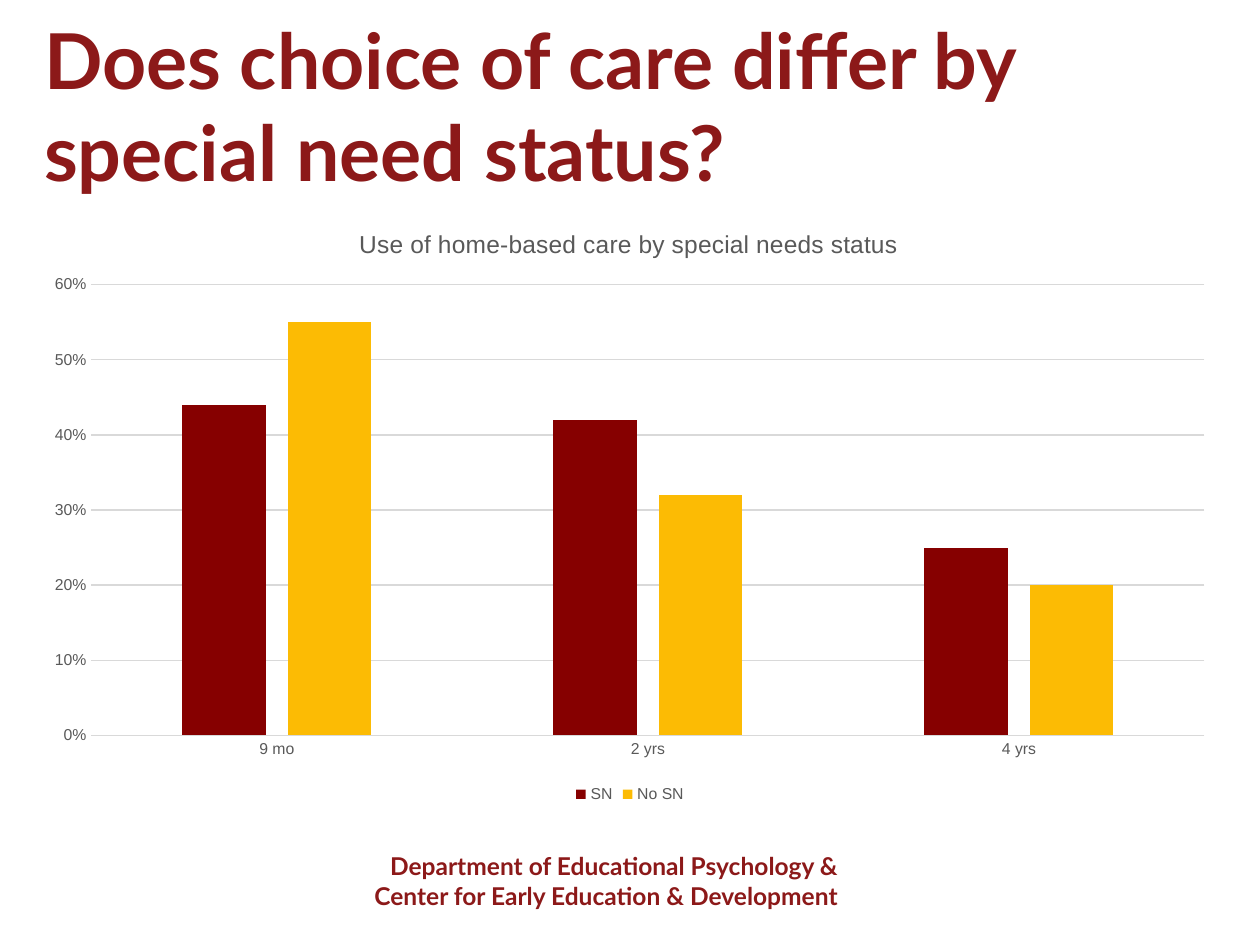
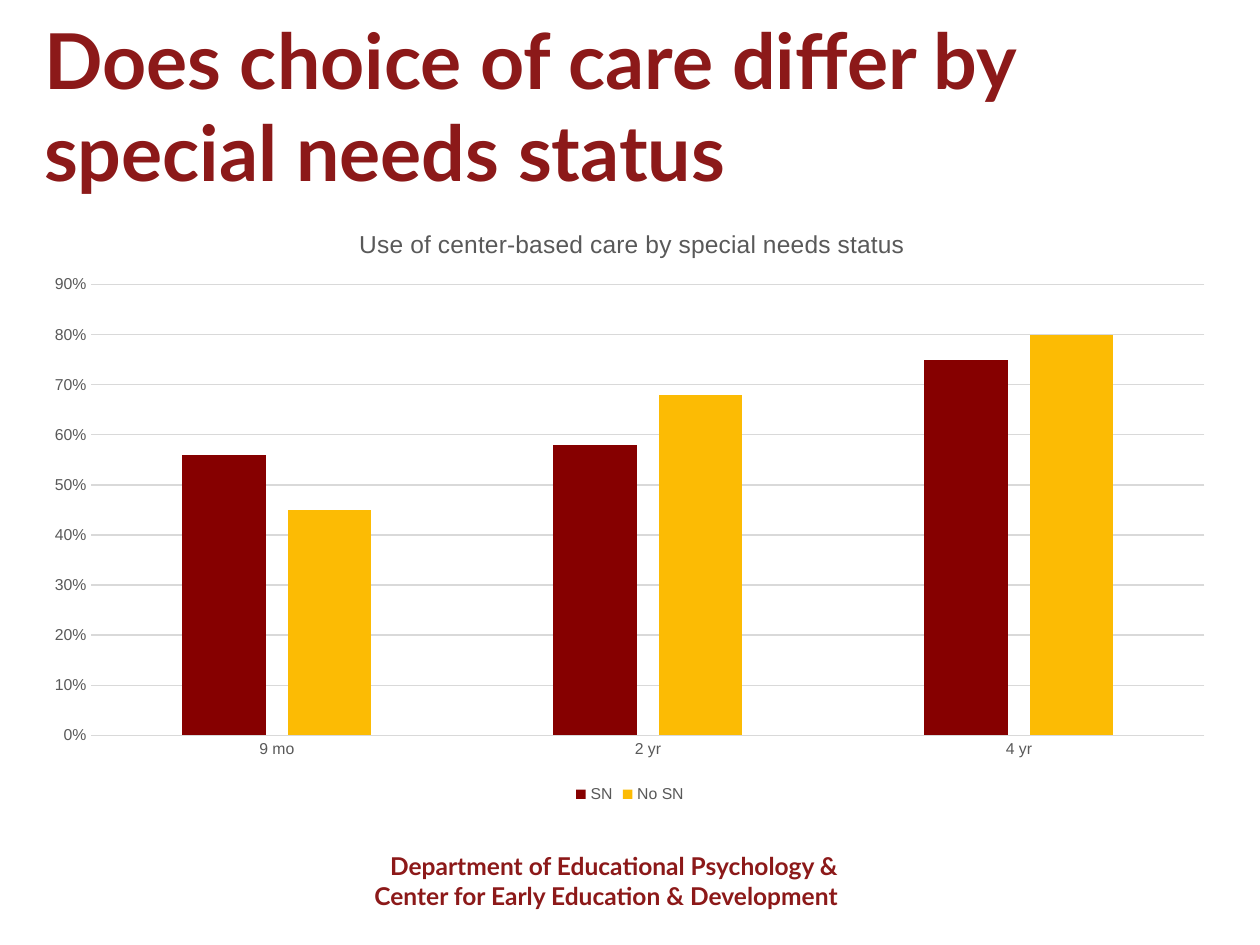
"""Build two slides comparing choice of care by special needs status."""
from pptx import Presentation
from pptx.chart.data import CategoryChartData
from pptx.dml.color import RGBColor
from pptx.enum.chart import XL_CHART_TYPE as ChartType, XL_LEGEND_POSITION as LegendPosition
from pptx.enum.chart import XL_TICK_MARK as TickMark
from pptx.enum.text import MSO_ANCHOR as Anchor, MSO_AUTO_SIZE as AutoSize, PP_ALIGN as Align
from pptx.oxml import parse_xml
from pptx.oxml.ns import nsdecls, qn
from pptx.util import Pt

COLORS = {"heading": "8C1919", "SN": "860000", "No SN": "FCBB04",
          "label": "595959", "grid": "D9D9D9"}
FOOTER = ["Department of Educational Psychology &", "Center for Early Education & Development"]
SLIDES = [
    {"title": "Does choice of care differ by special need status?",
     "chart_title": "Use of home-based care by special needs status",
     "ages": ["9 mo", "2 yrs", "4 yrs"], "maximum": 0.6,
     "series": {"SN": [0.44, 0.42, 0.25], "No SN": [0.55, 0.32, 0.2]}},
    {"title": "Does choice of care differ by special needs status",
     "chart_title": "Use of center-based care by special needs status",
     "ages": ["9 mo", "2 yr", "4 yr"], "maximum": 0.9,
     "series": {"SN": [0.56, 0.58, 0.75], "No SN": [0.45, 0.68, 0.8]}},
]


def style_font(font, name, size, color, bold=False):
    font.name, font.size, font.bold = name, Pt(size), bold
    font.color.rgb = RGBColor.from_string(COLORS[color])


def place_part(element, index, **fractions):
    for layout in element.findall(qn("c:layout")):
        element.remove(layout)
    target = '<c:layoutTarget val="inner"/>' if "w" in fractions else ""
    modes = "".join(f'<c:{key}Mode val="edge"/>' for key in "xy")
    values = "".join(f'<c:{key} val="{value}"/>' for key, value in fractions.items())
    element.insert(index, parse_xml(
        f'<c:layout {nsdecls("c")}><c:manualLayout>{target}{modes}{values}'
        '</c:manualLayout></c:layout>'))


presentation = Presentation()
presentation.slide_width, presentation.slide_height = Pt(720), Pt(540)

for content in SLIDES:
    slide = presentation.slides.add_slide(presentation.slide_layouts[5])

    footer = slide.shapes.add_textbox(Pt(126), Pt(483), Pt(360), Pt(41)).text_frame
    footer.word_wrap = True
    for number, line in enumerate(FOOTER):
        paragraph = footer.add_paragraph() if number else footer.paragraphs[0]
        paragraph.alignment = Align.RIGHT
        run = paragraph.add_run()
        run.text = line
        style_font(run.font, "Lato", 14, "heading", True)

    title = slide.shapes.title
    title.left, title.top, title.width, title.height = Pt(18), Pt(30), Pt(684), Pt(60)
    title.text_frame.auto_size = AutoSize.NONE
    title.text_frame.vertical_anchor = Anchor.MIDDLE
    paragraph = title.text_frame.paragraphs[0]
    paragraph.alignment = Align.LEFT
    run = paragraph.add_run()
    run.text = content["title"]
    style_font(run.font, "Lato", 44, "heading", True)

    data = CategoryChartData(number_format="0.00%")
    data.categories = content["ages"]
    for name, values in content["series"].items():
        data.add_series(name, values)
    chart = slide.shapes.add_chart(ChartType.COLUMN_CLUSTERED, Pt(18), Pt(114),
                                   Pt(684), Pt(348), data).chart
    chart.font.name, chart.font.size = "Arial", Pt(10)

    chart.has_title = True
    run = chart.chart_title.text_frame.paragraphs[0].add_run()
    run.text = content["chart_title"]
    style_font(run.font, "Arial", 14, "label")
    chart.chart_title.include_in_layout = False
    place_part(chart.chart_title.element, 1, x=0.27, y=0.04)
    place_part(chart.element.find(".//" + qn("c:plotArea")), 0, x=0.05, y=0.14, w=0.93, h=0.74)

    chart.has_legend = True
    chart.legend.position = LegendPosition.BOTTOM
    chart.legend.include_in_layout = False
    style_font(chart.legend.font, "Arial", 9, "label")

    plot = chart.plots[0]
    plot.gap_width, plot.overlap, plot.vary_by_categories = 219, -27, False
    for series in plot.series:
        series.format.fill.solid()
        series.format.fill.fore_color.rgb = RGBColor.from_string(COLORS[series.name])

    age_axis, share_axis = chart.category_axis, chart.value_axis
    for axis in (age_axis, share_axis):
        axis.major_tick_mark = axis.minor_tick_mark = TickMark.NONE
        style_font(axis.tick_labels.font, "Arial", 9, "label")
    share_axis.minimum_scale, share_axis.maximum_scale = 0, content["maximum"]
    share_axis.major_unit = 0.1
    share_axis.tick_labels.number_format = "0%"
    share_axis.tick_labels.number_format_is_linked = False
    share_axis.format.line.fill.background()
    for line in (age_axis.format.line, share_axis.major_gridlines.format.line):
        line.width = Pt(0.75)
        line.color.rgb = RGBColor.from_string(COLORS["grid"])

presentation.save("out.pptx")
